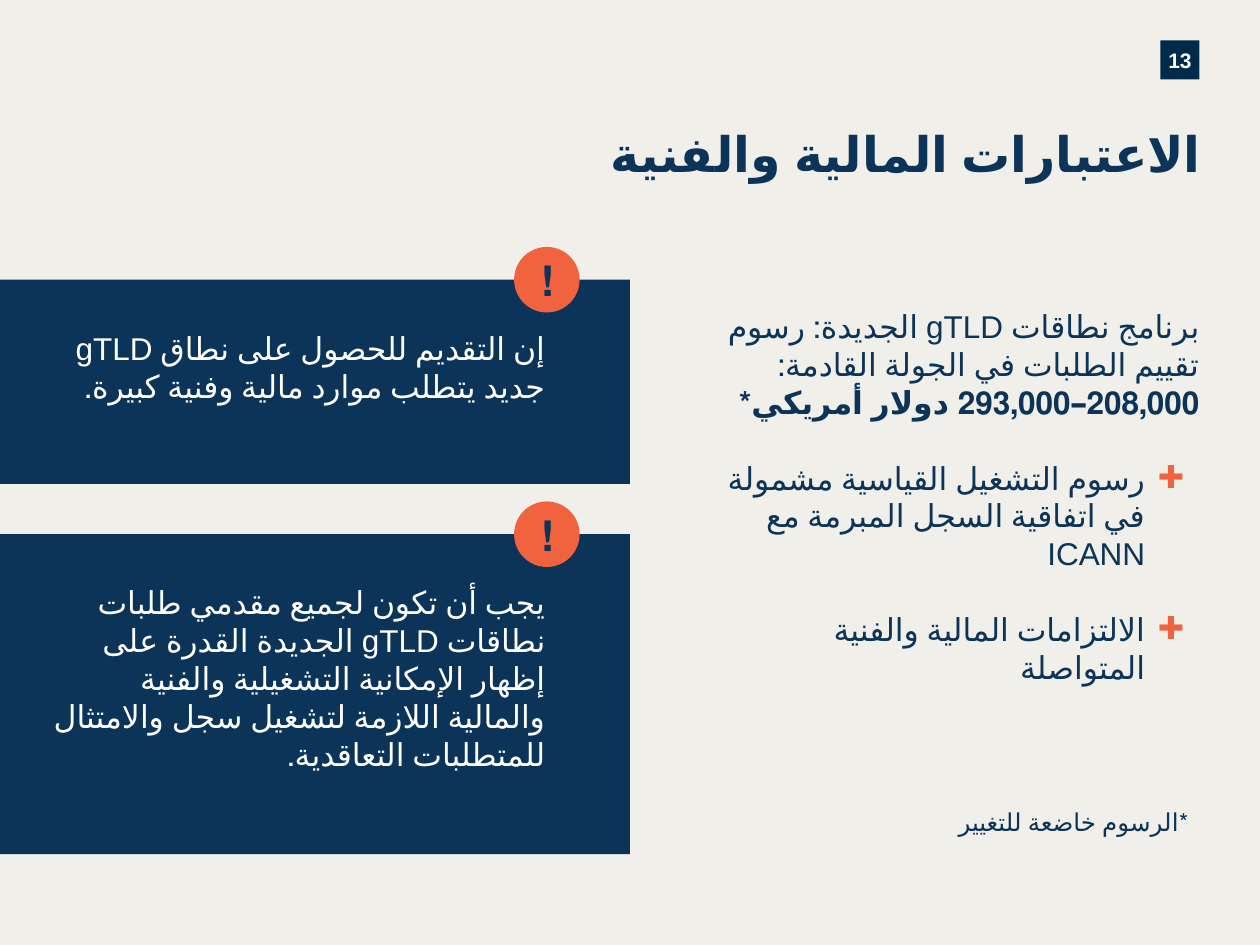
import collections
import lxml.etree
import pptx
import pptx.dml.color
import pptx.enum.lang
import pptx.enum.shapes
import pptx.enum.text
import pptx.oxml.ns
import pptx.util

Box = collections.namedtuple("Box", "left top width height")
Inches = pptx.util.Inches
Shapes = pptx.enum.shapes.MSO_SHAPE
Align = pptx.enum.text.PP_ALIGN
Anchor = pptx.enum.text.MSO_ANCHOR
ARABIC = pptx.enum.lang.MSO_LANGUAGE_ID.ARABIC

WIDTH, HEIGHT = 10, 7.5
NAVY, DARK, ORANGE, WHITE, CREAM = "0B3458", "002A49", "F1633E", "FFFFFF", "F1EFEA"
FONT = "Arial"
BADGE = 0.52


def colour(hex_text):
    return pptx.dml.color.RGBColor.from_string(hex_text)


def emu(box):
    return [Inches(length) for length in box]


def add_element(parent, tag, **attributes):
    element = lxml.etree.SubElement(parent, pptx.oxml.ns.qn(tag))
    for name, value in attributes.items():
        element.set(name, value)
    return element


def set_frame(frame, insets=(0, 0, 0, 0), anchor=Anchor.TOP):
    frame.word_wrap = True
    frame.auto_size = pptx.enum.text.MSO_AUTO_SIZE.NONE
    frame.vertical_anchor = anchor
    frame.margin_left, frame.margin_top, frame.margin_right, frame.margin_bottom = emu(insets)


def format_para(para, size, hex_text, bold=False, align=Align.RIGHT, rtl=True):
    para.alignment = align
    font = para.font
    font.size = pptx.util.Pt(size)
    font.bold = bold
    font.color.rgb = colour(hex_text)
    font.name = FONT
    if rtl:
        para._p.get_or_add_pPr().set("rtl", "1")
        for span in para.runs:
            span.font.language_id = ARABIC


def add_bullet(para):
    properties = para._p.get_or_add_pPr()
    properties.set("marL", str(Inches(0.43)))
    properties.set("indent", str(Inches(-0.31)))
    para.space_before = pptx.util.Pt(21.6)
    tint = add_element(properties, "a:buClr")
    add_element(tint, "a:srgbClr", val=ORANGE)
    add_element(properties, "a:buFont", typeface=FONT)
    add_element(properties, "a:buChar", char="✚")


def add_filled(page, kind, box, fill, text, insets, anchor, **style):
    shape = page.shapes.add_shape(kind, *emu(box))
    shape.shadow.inherit = False
    shape.fill.solid()
    shape.fill.fore_color.rgb = colour(fill)
    shape.line.fill.background()
    set_frame(shape.text_frame, insets, anchor)
    para = shape.text_frame.paragraphs[0]
    para.text = text
    format_para(para, **style)


def add_page_number(page, box, number):
    add_filled(page, Shapes.RECTANGLE, box, DARK, number, (0, 0, 0, 0), Anchor.MIDDLE,
               size=12, hex_text=WHITE, bold=True, align=Align.CENTER, rtl=False)


def add_title(page, box, text):
    title = page.shapes.title
    title.left, title.top, title.width, title.height = emu(box)
    set_frame(title.text_frame)
    para = title.text_frame.paragraphs[0]
    para.text = text
    format_para(para, 28, NAVY, bold=True)


def add_fees(page, box, intro, amount, points):
    frame = page.shapes.add_textbox(*emu(box)).text_frame
    set_frame(frame)
    para = frame.paragraphs[0]
    para.add_run().text = intro
    span = para.add_run()
    span.text = amount
    span.font.bold = True
    format_para(para, 18, NAVY)
    for point in points:
        para = frame.add_paragraph()
        para.text = point
        add_bullet(para)
        format_para(para, 18, NAVY)


def add_warning(page, box, text):
    add_filled(page, Shapes.RECTANGLE, box, NAVY, text, (0.39, 0.39, 0.67, 0.3), Anchor.TOP,
               size=18, hex_text=WHITE)
    badge = Box(box.left + box.width - 0.4 - BADGE, box.top - BADGE / 2, BADGE, BADGE)
    add_filled(page, Shapes.OVAL, badge, ORANGE, "!", (0.1, 0.05, 0.1, 0.05), Anchor.MIDDLE,
               size=24, hex_text=NAVY, bold=True, align=Align.CENTER)


def add_footnote(page, box, text):
    frame = page.shapes.add_textbox(*emu(box)).text_frame
    set_frame(frame, (0.1, 0.05, 0.1, 0.05))
    frame.paragraphs[0].text = text
    format_para(frame.paragraphs[0], 14, NAVY)


def main():
    deck = pptx.Presentation()
    deck.slide_width, deck.slide_height = Inches(WIDTH), Inches(HEIGHT)
    page = deck.slides.add_slide(deck.slide_layouts[5])
    page.background.fill.solid()
    page.background.fill.fore_color.rgb = colour(CREAM)

    add_page_number(page, Box(9.21, 0.32, 0.31, 0.31), "13")
    add_title(page, Box(0.47, 0.98, 9.06, 0.57), "الاعتبارات المالية والفنية")
    add_fees(
        page,
        Box(5.69, 2.44, 3.83, 4.26),
        "برنامج نطاقات gTLD الجديدة: رسوم تقييم الطلبات في الجولة القادمة: ",
        "208,000–293,000 دولار أمريكي*",
        [
            "رسوم التشغيل القياسية مشمولة في اتفاقية السجل المبرمة مع ICANN",
            "الالتزامات المالية والفنية المتواصلة",
        ],
    )
    warnings = [
        (2.22, 1.62, "إن التقديم للحصول على نطاق gTLD جديد يتطلب موارد مالية وفنية كبيرة."),
        (4.24, 2.54, "يجب أن تكون لجميع مقدمي طلبات نطاقات gTLD الجديدة القدرة على إظهار "
                     "الإمكانية التشغيلية والفنية والمالية اللازمة لتشغيل سجل والامتثال "
                     "للمتطلبات التعاقدية."),
    ]
    for top, height, text in warnings:
        add_warning(page, Box(0, top, WIDTH / 2, height), text)
    add_footnote(page, Box(5.91, 6.36, 3.62, 0.34), "*الرسوم خاضعة للتغيير")
    deck.save("out.pptx")


if __name__ == "__main__":
    main()
